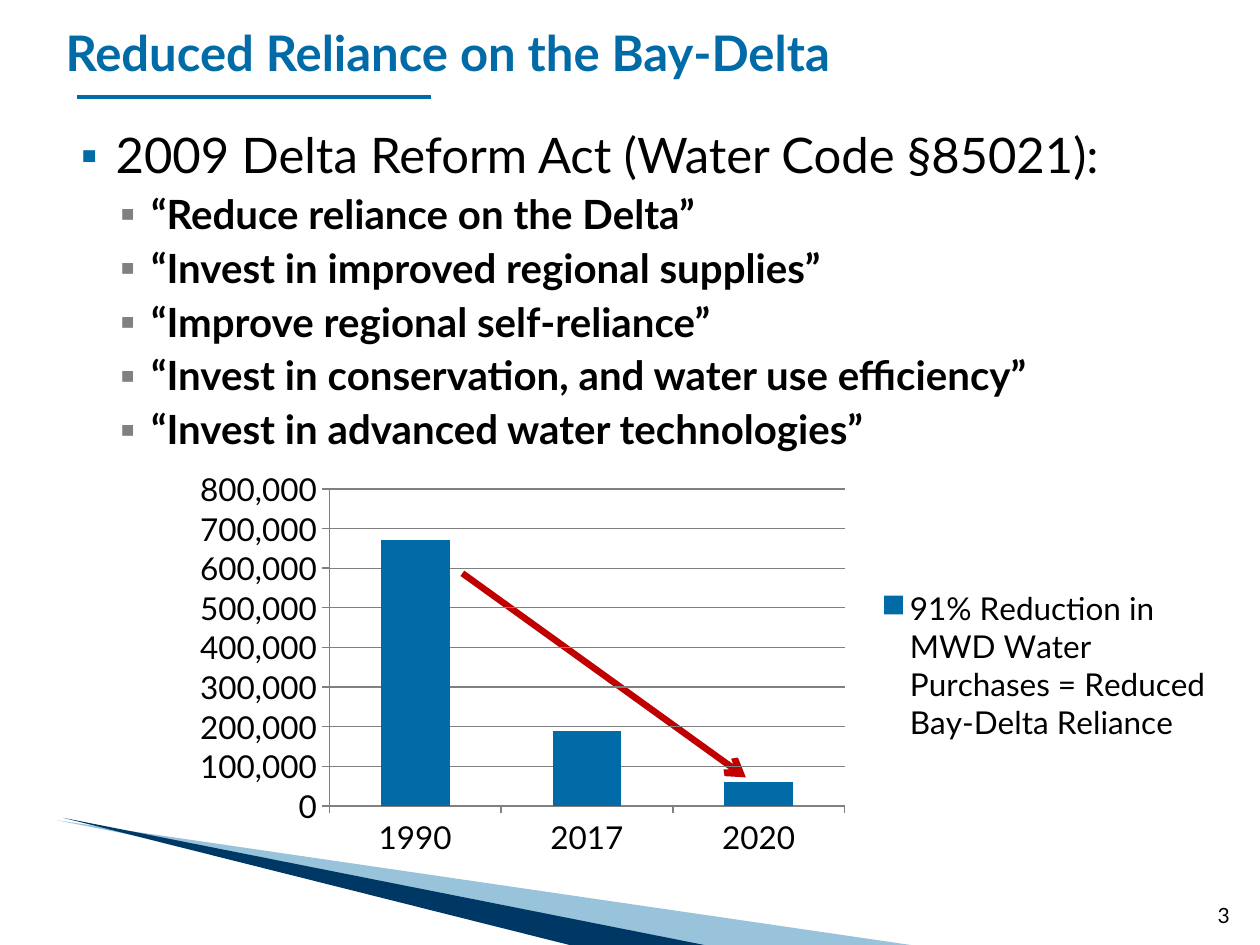
"""Build the slide on reduced reliance on the Bay-Delta."""
from lxml import etree
from pptx import Presentation
from pptx.chart.data import CategoryChartData
from pptx.dml.color import RGBColor
from pptx.enum.chart import XL_CHART_TYPE, XL_LEGEND_POSITION, XL_TICK_MARK
from pptx.enum.shapes import MSO_CONNECTOR
from pptx.enum.text import MSO_ANCHOR, PP_ALIGN
from pptx.oxml.ns import qn
from pptx.util import Inches, Pt

COLUMN = XL_CHART_TYPE.COLUMN_CLUSTERED
LEGEND_RIGHT = XL_LEGEND_POSITION.RIGHT
TICK_OUT = XL_TICK_MARK.OUTSIDE
STRAIGHT = MSO_CONNECTOR.STRAIGHT
LEFT, RIGHT = PP_ALIGN.LEFT, PP_ALIGN.RIGHT
TOP, MIDDLE, BOTTOM = MSO_ANCHOR.TOP, MSO_ANCHOR.MIDDLE, MSO_ANCHOR.BOTTOM

THEME = {
    "font": "Lato",
    "blue": "006BA6", "navy": "003865", "red": "C00000",
    "gray": "808080", "black": "000000",
    "heading": 28, "point": 23, "chart": 18, "number": 12,
}

TITLE = "Reduced Reliance on the Bay-Delta"
ACT = "2009 Delta Reform Act (Water Code §85021):"
GOALS = [
    "“Reduce reliance on the Delta”",
    "“Invest in improved regional supplies”",
    "“Improve regional self-reliance”",
    "“Invest in conservation, and water use efficiency”",
    "“Invest in advanced water technologies”",
]
PURCHASES = {"1990": 670000, "2017": 190000, "2020": 60000}
SERIES = "91% Reduction in MWD Water Purchases = Reduced Bay-Delta Reliance"
PAGE_NUMBER = "3"
SWOOSHES = [
    ([(0.45, 6.51), (7.23, 7.5), (5.49, 7.5)], "blue", 40),
    ([(0.5, 6.49), (5.59, 7.5), (4.52, 7.5)], "navy", 100),
]


def color(name):
    return RGBColor.from_string(THEME[name])


def add_swoosh(page, points, fill, opacity):
    corners = [(Inches(x), Inches(y)) for x, y in points]
    builder = page.shapes.build_freeform(*corners[0])
    builder.add_line_segments(corners[1:], close=True)
    swoosh = builder.convert_to_shape()
    swoosh.shadow.inherit = False
    swoosh.line.fill.background()
    swoosh.fill.solid()
    swoosh.fill.fore_color.rgb = color(fill)
    if opacity < 100:
        tone = next(swoosh.element.iter(qn("a:srgbClr")))
        etree.SubElement(tone, qn("a:alpha"), val=str(opacity * 1000))


def add_line(page, start, end, tone, width, arrow=False):
    ends = [Inches(length) for length in (*start, *end)]
    line = page.shapes.add_connector(STRAIGHT, *ends)
    line.line.color.rgb = color(tone)
    line.line.width = Pt(width)
    if arrow:
        etree.SubElement(line.line._get_or_add_ln(), qn("a:tailEnd"), type="arrow")
    etree.SubElement(line.element.spPr, qn("a:effectLst"))


def place(box, left, top, width, height, anchor):
    box.left, box.top = Inches(left), Inches(top)
    box.width, box.height = Inches(width), Inches(height)
    box.text_frame.word_wrap = True
    box.text_frame.vertical_anchor = anchor
    return box.text_frame


def add_bullet(para, tone, indent, hanging, percent):
    props = para._p.get_or_add_pPr()
    props.set("marL", str(Inches(indent)))
    props.set("indent", str(-Inches(hanging)))
    shade = etree.SubElement(props, qn("a:buClr"))
    etree.SubElement(shade, qn("a:srgbClr"), val=THEME[tone])
    etree.SubElement(props, qn("a:buSzPct"), val=str(percent * 1000))
    etree.SubElement(props, qn("a:buFont"), typeface=THEME["font"])
    etree.SubElement(props, qn("a:buChar"), char="▪")


def write(para, text, size, tone="black", bold=False, align=LEFT, before=0):
    para.alignment = align
    para.space_before = Pt(before)
    span = para.add_run()
    span.text = text
    span.font.name = THEME["font"]
    span.font.size = Pt(THEME[size])
    span.font.bold = bold
    span.font.color.rgb = color(tone)


def set_layout(part, index, target, **fractions):
    for old in part.findall(qn("c:layout")):
        part.remove(old)
    layout = etree.Element(qn("c:layout"))
    manual = etree.SubElement(layout, qn("c:manualLayout"))
    if target:
        etree.SubElement(manual, qn("c:layoutTarget"), val=target)
    for side in ("x", "y"):
        etree.SubElement(manual, qn(f"c:{side}Mode"), val="edge")
    for name, value in fractions.items():
        etree.SubElement(manual, qn(f"c:{name}"), val=str(value))
    part.insert(index, layout)


def add_purchases_chart(page):
    data = CategoryChartData(number_format="#,##0")
    data.categories = list(PURCHASES)
    data.add_series(SERIES, list(PURCHASES.values()))
    area = [Inches(length) for length in (1.42, 3.67, 8.23, 3.19)]
    chart = page.shapes.add_chart(COLUMN, *area, data).chart
    chart.has_title = False
    chart.font.name = THEME["font"]
    chart.font.size = Pt(THEME["chart"])
    chart.font.color.rgb = color("black")
    chart.has_legend = True
    chart.legend.position = LEGEND_RIGHT
    chart.legend.include_in_layout = False
    plot = chart.plots[0]
    plot.gap_width, plot.overlap = 150, -10
    plot.vary_by_categories = False
    bars = plot.series[0].format.fill
    bars.solid()
    bars.fore_color.rgb = color("blue")
    for axis in (chart.category_axis, chart.value_axis):
        axis.major_tick_mark = TICK_OUT
        axis.format.line.color.rgb = color("gray")
    scale = chart.value_axis
    scale.minimum_scale, scale.maximum_scale, scale.major_unit = 0, 800000, 100000
    scale.tick_labels.number_format = "#,##0"
    scale.tick_labels.number_format_is_linked = False
    scale.has_major_gridlines = True
    scale.major_gridlines.format.line.color.rgb = color("gray")
    plot_area = next(chart.element.iter(qn("c:plotArea")))
    legend = next(chart.element.iter(qn("c:legend")))
    set_layout(plot_area, 0, "inner", x=0.145, y=0.066, w=0.497, h=0.789)
    set_layout(legend, 1, None, x=0.67, y=0.3, w=0.33, h=0.41)


def main():
    deck = Presentation()
    deck.slide_width, deck.slide_height = Inches(10), Inches(7.5)
    page = deck.slides.add_slide(deck.slide_layouts[5])

    for points, fill, opacity in SWOOSHES:
        add_swoosh(page, points, fill, opacity)
    add_line(page, (0.61, 0.77), (3.42, 0.77), "blue", 2.25)

    title = place(page.shapes.title, 0.42, 0.08, 9.25, 0.67, MIDDLE)
    write(title.paragraphs[0], TITLE, "heading", tone="blue", bold=True)

    body = place(page.shapes.add_textbox(0, 0, 0, 0), 0.42, 0.94, 9.42, 2.73, TOP)
    add_bullet(body.paragraphs[0], "blue", 0.4, 0.28, 90)
    write(body.paragraphs[0], ACT, "heading")
    for goal in GOALS:
        para = body.add_paragraph()
        para.level = 1
        add_bullet(para, "gray", 0.68, 0.25, 100)
        write(para, goal, "point", bold=True, before=3.2)

    add_line(page, (3.67, 4.55), (5.92, 6.17), "red", 3.75, arrow=True)
    number = place(page.shapes.add_textbox(0, 0, 0, 0), 9.46, 7.01, 0.4, 0.4, BOTTOM)
    write(number.paragraphs[0], PAGE_NUMBER, "number", align=RIGHT)
    add_purchases_chart(page)
    deck.save("out.pptx")


if __name__ == "__main__":
    main()
